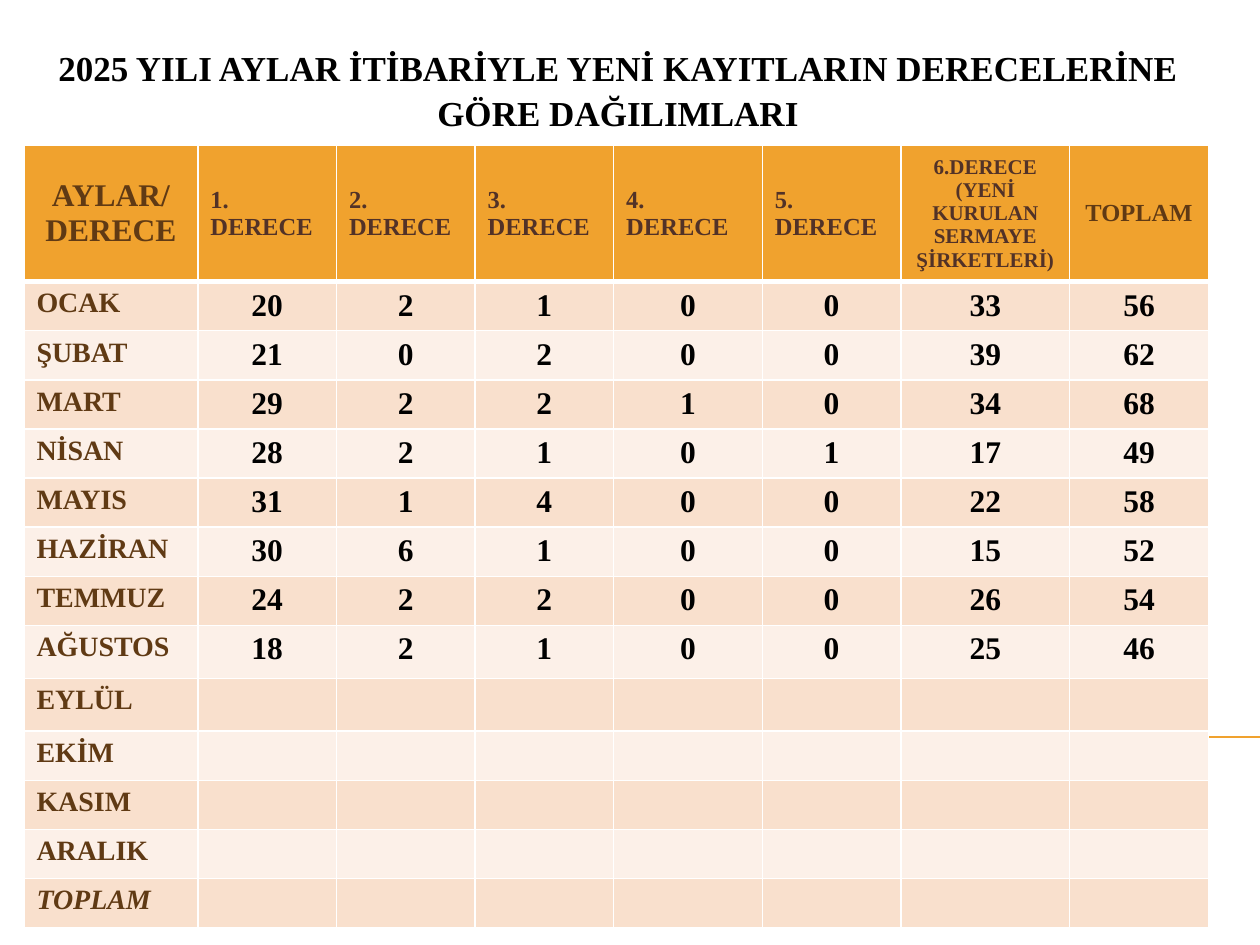
from dataclasses import dataclass

from lxml import etree
from pptx import Presentation
from pptx.dml.color import RGBColor
from pptx.enum.shapes import MSO_CONNECTOR
from pptx.enum.text import MSO_ANCHOR, MSO_AUTO_SIZE, PP_ALIGN
from pptx.oxml.ns import qn
from pptx.util import Inches, Pt

LEFT, MID = PP_ALIGN.LEFT, PP_ALIGN.CENTER
TOP, CENTER = MSO_ANCHOR.TOP, MSO_ANCHOR.MIDDLE
STRAIGHT = MSO_CONNECTOR.STRAIGHT
NO_FIT = MSO_AUTO_SIZE.NONE
WIDE, HIGH = Inches(10), Inches(7.5)


@dataclass(frozen=True)
class Theme:
    """Colours, type sizes and font of the slide."""
    font: str = "Times New Roman"
    ink: str = "000000"
    brown: str = "603A14"
    dark: str = "523227"
    gold: str = "F0A22E"
    bands: tuple = ("F9E0CD", "FCF0E8")
    edge: str = "FFFFFF"
    title: int = 20
    big: int = 18
    month: int = 16
    head: int = 14
    small: int = 12


T = Theme()
TITLE = "2025 YILI AYLAR İTİBARİYLE YENİ KAYITLARIN DERECELERİNE GÖRE DAĞILIMLARI"
HEADS = [
    ("AYLAR/ DERECE", T.big, T.brown, MID),
    *[(f"{n}. DERECE", T.head, T.dark, LEFT) for n in range(1, 6)],
    ("6.DERECE (YENİ KURULAN SERMAYE ŞİRKETLERİ)", T.small, T.dark, MID),
    ("TOPLAM", T.head, T.brown, MID),
]
ROWS = [
    ("OCAK", 20, 2, 1, 0, 0, 33, 56),
    ("ŞUBAT", 21, 0, 2, 0, 0, 39, 62),
    ("MART", 29, 2, 2, 1, 0, 34, 68),
    ("NİSAN", 28, 2, 1, 0, 1, 17, 49),
    ("MAYIS", 31, 1, 4, 0, 0, 22, 58),
    ("HAZİRAN", 30, 6, 1, 0, 0, 15, 52),
    ("TEMMUZ", 24, 2, 2, 0, 0, 26, 54),
    ("AĞUSTOS", 18, 2, 1, 0, 0, 25, 46),
    *[(name,) + ("",) * 7 for name in ("EYLÜL", "EKİM", "KASIM", "ARALIK", "TOPLAM")],
]
COLS = [1.38, 1.1, 1.1, 1.1, 1.18, 1.1, 1.34, 1.1]
TALL = [1.08] + [0.39] * 7 + [0.42] * 2 + [0.39] * 4


def scale(x, y, w, h):
    """Turn shares of the slide into lengths."""
    return int(x * WIDE), int(y * HIGH), int(w * WIDE), int(h * HIGH)


def write(frame, text, size=T.big, color=T.ink, align=MID, italic=False, space=None):
    """Fill a text frame with one formatted paragraph."""
    para = frame.paragraphs[0]
    para.alignment = align
    if space:
        para.line_spacing = space
    if not text:
        etree.SubElement(para._p, qn("a:endParaRPr"), sz=str(size * 100))
        return
    run = para.add_run()
    run.text = text
    font = run.font
    font.name, font.size, font.bold = T.font, Pt(size), True
    font.color.rgb = RGBColor.from_string(color)
    if italic:
        font.italic = True


def paint(cell, color, **widths):
    """Fill a cell and draw its edges in the given widths."""
    props = cell._tc.get_or_add_tcPr()
    for side in "LRTB":
        line = etree.SubElement(props, qn(f"a:ln{side}"), w=str(Pt(widths.get(side, 1))))
        fill = etree.SubElement(line, qn("a:solidFill"))
        etree.SubElement(fill, qn("a:srgbClr"), val=T.edge)
    cell.fill.solid()
    cell.fill.fore_color.rgb = RGBColor.from_string(color)


def head(slide, box):
    """Place the title."""
    shape = slide.shapes.title
    shape.left, shape.top, shape.width, shape.height = scale(*box)
    frame = shape.text_frame
    frame.word_wrap, frame.auto_size = True, NO_FIT
    frame.vertical_anchor = TOP
    write(frame, TITLE, size=T.title, space=1.08)


def rule(slide, box):
    """Draw the thin line that runs to the right edge."""
    x, y, w, h = scale(*box)
    line = slide.shapes.add_connector(STRAIGHT, x, y, x + w, y + h)
    line.line.color.rgb = RGBColor.from_string(T.gold)
    line.line.width = Pt(0.75)
    etree.SubElement(line._element.spPr, qn("a:effectLst"))


def grid(slide, box):
    """Place the table of months and degrees."""
    x, y, w, h = scale(*box)
    table = slide.shapes.add_table(len(TALL), len(COLS), x, y, w, h).table
    for col, part in zip(table.columns, COLS):
        col.width = int(w * part / sum(COLS))
    for row, part in zip(table.rows, TALL):
        row.height = int(h * part / sum(TALL))
    for c, (text, size, color, align) in enumerate(HEADS):
        cell = table.cell(0, c)
        cell.vertical_anchor = CENTER
        write(cell.text_frame, text, size=size, color=color, align=align)
        paint(cell, T.gold, B=3)
    for r, (name, *nums) in enumerate(ROWS, 1):
        band = T.bands[(r - 1) % 2]
        edge = {"T": 3} if r == 1 else {}
        first = table.cell(r, 0)
        write(first.text_frame, name, size=T.month, color=T.brown, align=LEFT,
              italic=r == len(ROWS))
        paint(first, band, **edge)
        for c, num in enumerate(nums, 1):
            cell = table.cell(r, c)
            write(cell.text_frame, str(num), size=T.month if num == "" else T.big)
            paint(cell, band, **edge)


def main():
    """Build and save the slide."""
    deck = Presentation()
    deck.slide_width, deck.slide_height = WIDE, HIGH
    slide = deck.slides.add_slide(deck.slide_layouts.get_by_name("Title Only"))
    rule(slide, (0.056, 0.78, 0.944, 0))
    head(slide, (0.028, 0.039, 0.925, 0.084))
    grid(slide, (0.019, 0.154, 0.94, 0.828))
    deck.save("out.pptx")


if __name__ == "__main__":
    main()
